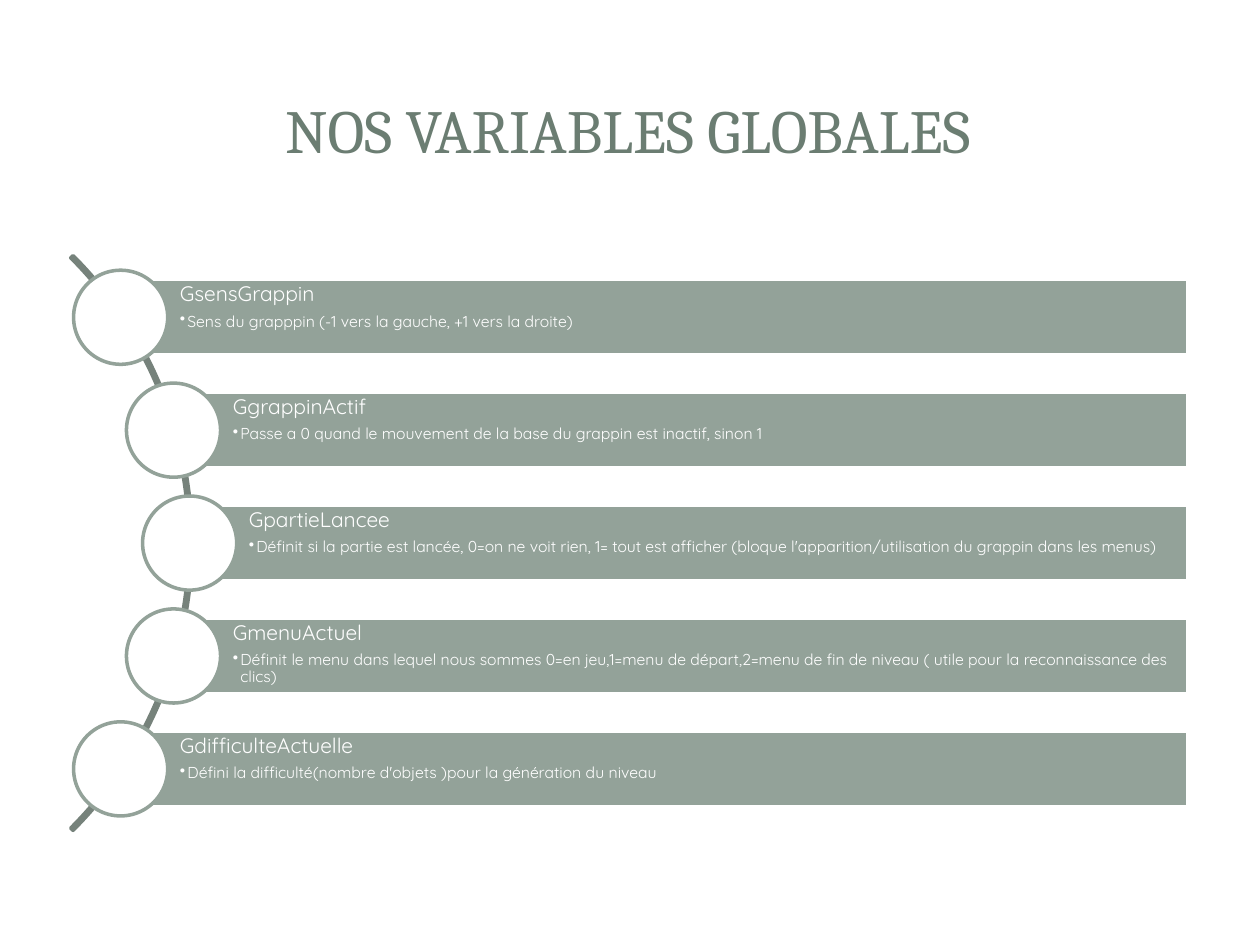
from dataclasses import dataclass
from math import sqrt
from lxml.etree import SubElement
from pptx import Presentation
from pptx.dml.color import RGBColor as Rgb
from pptx.enum.shapes import MSO_SHAPE as Preset
from pptx.enum.text import MSO_ANCHOR as Anchor, PP_ALIGN as Align
from pptx.oxml.ns import qn
from pptx.util import Inches, Pt


@dataclass(frozen=True)
class Theme:
    title_color: Rgb = Rgb(0x6B, 0x7D, 0x72)
    arc_color: Rgb = Rgb(0x76, 0x82, 0x7B)
    bar_color: Rgb = Rgb(0x93, 0xA2, 0x99)
    white: Rgb = Rgb(0xFF, 0xFF, 0xFF)
    title_font: str = "Cambria"
    body_font: str = "Quicksand"
    title_size: float = 35
    name_size: float = 12
    detail_size: float = 9
    line_width: float = 2


@dataclass(frozen=True)
class Box:
    left: float
    top: float
    width: float
    height: float

    def lengths(self):
        return [Inches(v) for v in (self.left, self.top, self.width, self.height)]


THEME = Theme()
SLIDE_WIDTH, SLIDE_HEIGHT = 10, 7.5
TITLE_BOX = Box(0.47, 0.45, 9.03, 1.14)
LIST_BOX = Box(0.58, 2.07, 8.85, 4.48)
VARIABLES = [
    ("GsensGrappin", "Sens du grapppin (-1 vers la gauche, +1 vers la droite)"),
    ("GgrappinActif", "Passe a 0 quand le mouvement de la base du grappin est inactif, sinon 1"),
    ("GpartieLancee", "Définit si la partie est lancée, 0=on ne voit rien, 1= tout est afficher "
     "(bloque l'apparition/utilisation du grappin dans les menus)"),
    ("GmenuActuel", "Définit le menu dans lequel nous sommes 0=en jeu,1=menu de départ,"
     "2=menu de fin de niveau ( utile pour la reconnaissance des clics)"),
    ("GdifficulteActuelle", "Défini la difficulté(nombre d'objets )pour la génération du niveau"),
]


def style_text(paragraph, font_name, size, color):
    for run in paragraph.runs:
        run.font.name = font_name
        run.font.size = Pt(size)
        run.font.color.rgb = color


def add_preset(slide, preset, box, fill, line):
    shape = slide.shapes.add_shape(preset, *box.lengths())
    shape.shadow.inherit = False
    if fill is None:
        shape.fill.background()
    else:
        shape.fill.solid()
        shape.fill.fore_color.rgb = fill
    shape.line.color.rgb = line
    shape.line.width = Pt(THEME.line_width)
    return shape


def add_bullet(paragraph):
    properties = paragraph._p.get_or_add_pPr()
    properties.set("marL", str(Inches(0.06)))
    properties.set("indent", str(Inches(-0.06)))
    SubElement(properties, qn("a:buChar")).set("char", "•")


def fill_bar(bar, name, detail):
    frame = bar.text_frame
    frame.word_wrap = True
    frame.vertical_anchor = Anchor.TOP
    frame.margin_left = Inches(0.47)
    frame.margin_top = frame.margin_right = frame.margin_bottom = Inches(0.03)
    frame.text = f"{name}\n{detail}"
    sizes = (THEME.name_size, THEME.detail_size)
    for paragraph, size, gap in zip(frame.paragraphs, sizes, (0.35, 0.15)):
        paragraph.alignment = Align.LEFT
        paragraph.line_spacing = 0.9
        paragraph.space_after = Pt(round(size * gap, 1))
        style_text(paragraph, THEME.body_font, size, THEME.white)
    detail_paragraph = frame.paragraphs[1]
    detail_paragraph.level = 1
    add_bullet(detail_paragraph)


def add_title(slide, box):
    title = slide.shapes.title
    title.left, title.top, title.width, title.height = box.lengths()
    frame = title.text_frame
    frame.text = "NOS VARIABLES GLOBALES"
    frame.vertical_anchor = Anchor.MIDDLE
    paragraph = frame.paragraphs[0]
    paragraph.alignment = Align.CENTER
    style_text(paragraph, THEME.title_font, THEME.title_size, THEME.title_color)


def add_curved_list(slide, box, variables):
    row = box.height / len(variables)
    bar_height, diameter = row * 2 / 3, row * 5 / 6
    middle = box.top + box.height / 2
    radius = box.height * 0.72
    arc_center = box.left - radius * sqrt(0.5)
    arc = add_preset(slide, Preset.BLOCK_ARC,
                     Box(arc_center - radius, middle - radius, 2 * radius, 2 * radius),
                     None, THEME.arc_color)
    for index, value in enumerate((189, 27, 0.004)):
        arc.adjustments[index] = value

    track = radius - 0.02
    right = box.left + box.width
    for index, (name, detail) in enumerate(variables):
        center_y = box.top + (index + 0.5) * row
        center_x = arc_center + sqrt(track ** 2 - (center_y - middle) ** 2)
        bar = add_preset(slide, Preset.RECTANGLE,
                         Box(center_x, center_y - bar_height / 2, right - center_x, bar_height),
                         THEME.bar_color, THEME.white)
        fill_bar(bar, name, detail)
        add_preset(slide, Preset.OVAL,
                   Box(center_x - diameter / 2, center_y - diameter / 2, diameter, diameter),
                   THEME.white, THEME.bar_color)


def main():
    presentation = Presentation()
    presentation.slide_width = Inches(SLIDE_WIDTH)
    presentation.slide_height = Inches(SLIDE_HEIGHT)
    slide = presentation.slides.add_slide(presentation.slide_layouts[5])
    add_title(slide, TITLE_BOX)
    add_curved_list(slide, LIST_BOX, VARIABLES)
    presentation.save("out.pptx")


if __name__ == "__main__":
    main()
